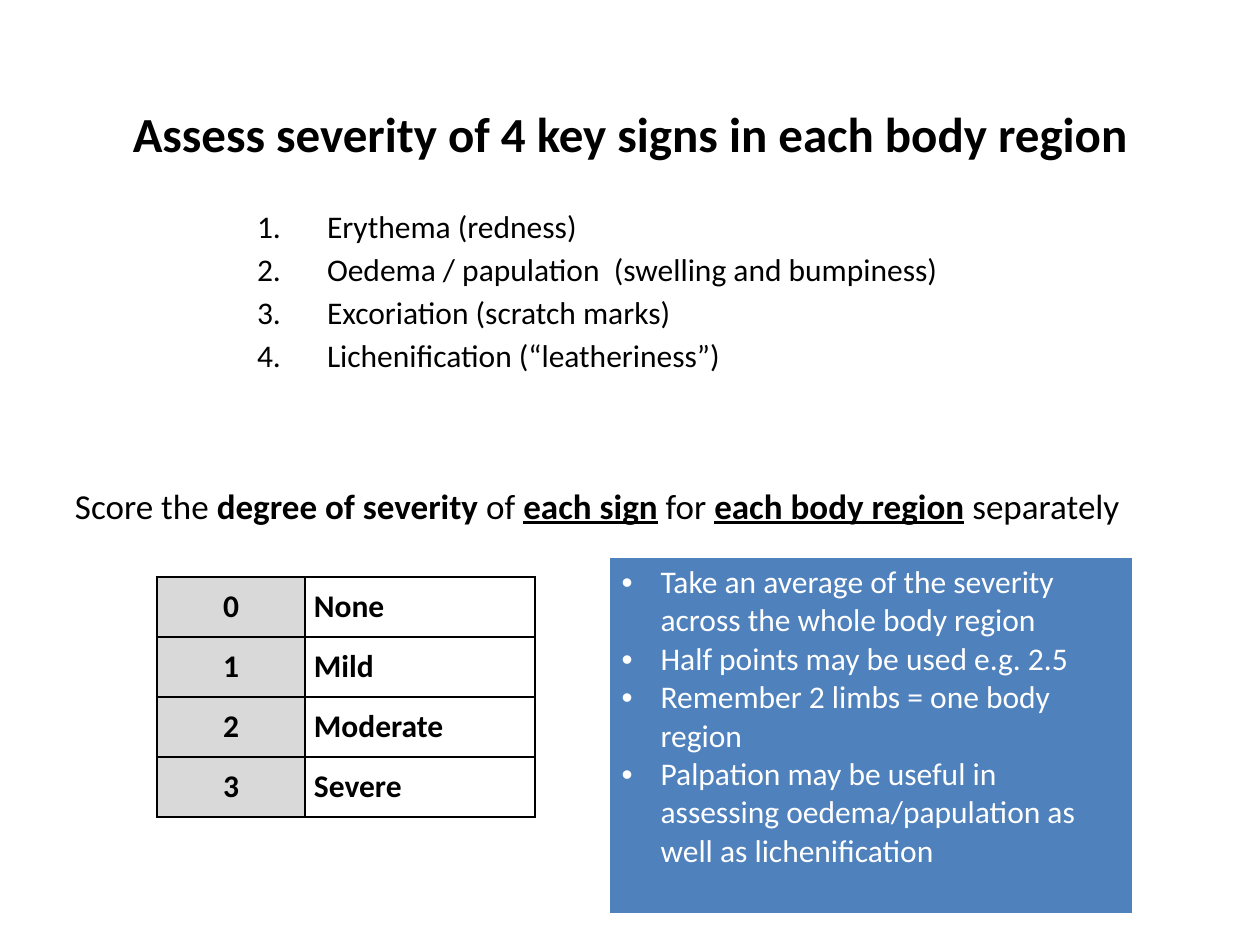
import pptx
import pptx.dml.color
import pptx.enum.text
import pptx.oxml.ns
import pptx.util
from lxml import etree

SCALE = 914400 / 126
ALIGN = pptx.enum.text.PP_ALIGN
ANCHOR = pptx.enum.text.MSO_ANCHOR


def px(n):
    return pptx.util.Emu(round(n * SCALE))


def color(code):
    return pptx.dml.color.RGBColor.from_string(code)


def child(node, tag, **attrs):
    return etree.SubElement(node, pptx.oxml.ns.qn(tag), **attrs)


class Deck:
    font = "Calibri"
    black, white, grey, blue = "000000", "FFFFFF", "D9D9D9", "4F81BD"

    def __init__(self, wide, high):
        self.file = pptx.Presentation()
        self.file.slide_width, self.file.slide_height = px(wide), px(high)
        self.slide = self.file.slides.add_slide(self.file.slide_layouts[5])

    def run(self, para, text, size, ink=black, bold=False, line=False):
        run = para.add_run()
        run.text = text
        font = run.font
        font.name, font.size = self.font, pptx.util.Pt(size)
        font.bold, font.underline = bold, line
        font.color.rgb = color(ink)

    def mark(self, para, indent, tag, **attrs):
        props = para._p.get_or_add_pPr()
        props.set("marL", str(px(indent)))
        props.set("indent", str(-px(indent)))
        child(props, "a:buFont", typeface="Arial" if tag == "a:buChar" else self.font)
        child(props, tag, **attrs)

    def items(self, frame, texts, indent, gap, ink, tag, **attrs):
        for i, text in enumerate(texts):
            para = frame.add_paragraph() if i else frame.paragraphs[0]
            self.mark(para, indent, tag, **attrs)
            para.space_before = pptx.util.Pt(gap if i else 0)
            self.run(para, text, 18, ink)

    def frame(self, shape):
        frame = shape.text_frame
        frame.word_wrap = True
        frame.margin_left = frame.margin_right = 0
        frame.margin_top = frame.margin_bottom = 0
        return frame

    def title(self, text, x, y, w, h):
        shape = self.slide.shapes.title
        shape.left, shape.top, shape.width, shape.height = map(px, (x, y, w, h))
        frame = self.frame(shape)
        frame.vertical_anchor = ANCHOR.MIDDLE
        para = frame.paragraphs[0]
        para.alignment = ALIGN.CENTER
        self.run(para, text, 28, bold=True)

    def box(self, x, y, w, h):
        return self.frame(self.slide.shapes.add_textbox(*map(px, (x, y, w, h))))

    def table(self, x, y, cols, rows):
        area = map(px, (x, y, sum(cols), sum(rows)))
        table = self.slide.shapes.add_table(len(rows), len(cols), *area).table
        table.first_row = table.horz_banding = False
        for col, wide in zip(table.columns, cols):
            col.width = px(wide)
        for row, high in zip(table.rows, rows):
            row.height = px(high)
        return table

    def cell(self, cell, fill, edge):
        if fill:
            cell.fill.solid()
            cell.fill.fore_color.rgb = color(fill)
        else:
            cell.fill.background()
        props = cell._tc.get_or_add_tcPr()
        for i, side in enumerate("LRTB"):
            line = child(props, "a:ln" + side, w=str(pptx.util.Pt(1)))
            child(child(line, "a:solidFill"), "a:srgbClr", val=edge)
            props.insert(i, line)


def main():
    deck = Deck(1260, 945)

    # Heading
    deck.title("Assess severity of 4 key signs in each body region", 63, 94, 1134, 78)

    # Numbered signs
    signs = ["Erythema (redness)", "Oedema / papulation  (swelling and bumpiness)",
             "Excoriation (scratch marks)", "Lichenification (“leatheriness”)"]
    deck.items(deck.box(257, 207, 850, 176), signs, 70, 3, deck.black,
               "a:buAutoNum", type="arabicPeriod")

    # Scoring instruction
    para = deck.box(75, 484, 1110, 44).paragraphs[0]
    for text, bold, line in [
        ("Score the ", False, False),
        ("degree of severity ", True, False),
        ("of ", False, False),
        ("each sign", True, True),
        (" for ", False, False),
        ("each body region", True, True),
        (" separately", False, False),
    ]:
        deck.run(para, text, 20, bold=bold, line=line)

    # Severity scale
    grades = ["None", "Mild", "Moderate", "Severe"]
    scale = deck.table(157, 577, [148, 230], [60] * len(grades))
    for i, grade in enumerate(grades):
        for j, text in enumerate([str(i), grade]):
            cell = scale.cell(i, j)
            deck.cell(cell, None if j else deck.grey, deck.black)
            cell.margin_left = cell.margin_right = px(9)
            cell.margin_top = cell.margin_bottom = 0
            cell.vertical_anchor = ANCHOR.MIDDLE
            para = cell.text_frame.paragraphs[0]
            para.alignment = ALIGN.LEFT if j else ALIGN.CENTER
            deck.run(para, text, 18, bold=True)

    # Scoring tips
    tips = ["Take an average of the severity across the whole body region",
            "Half points may be used e.g. 2.5",
            "Remember 2 limbs = one body region",
            "Palpation may be useful in assessing oedema/papulation as well as lichenification"]
    cell = deck.table(609, 557, [524], [357]).cell(0, 0)
    deck.cell(cell, deck.blue, deck.white)
    deck.items(cell.text_frame, tips, 39, 0, deck.white, "a:buChar", char="•")

    deck.file.save("out.pptx")


if __name__ == "__main__":
    main()
